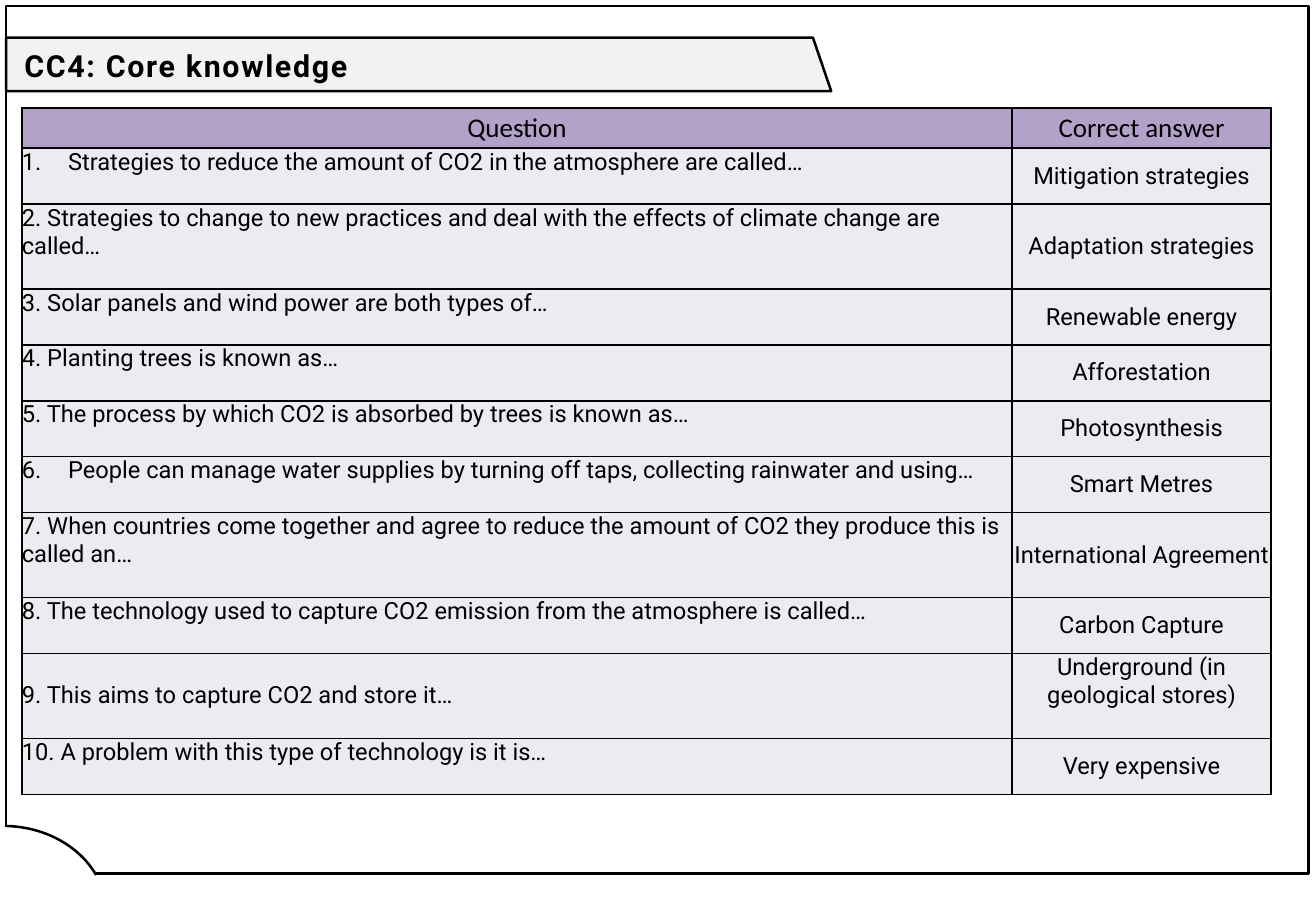
from lxml.etree import SubElement
from pptx import Presentation
from pptx.dml.color import RGBColor
from pptx.enum.shapes import MSO_SHAPE
from pptx.enum.text import MSO_ANCHOR, MSO_AUTO_SIZE, PP_ALIGN
from pptx.oxml.ns import qn
from pptx.util import Inches, Pt

COLORS = {
    "ink": "000000",
    "paper": "FFFFFF",
    "banner": "F2F2F2",
    "header": "B4A1CA",
    "body": "EDEAF1",
}
HEADER = ("Question", "Correct answer")
# question, answer, list number (if automatic), row height
ROWS = [
    ("Strategies to reduce the amount of CO2 in the atmosphere are called…",
     "Mitigation strategies", 1, 0.46),
    ("2. Strategies to change to new practices and deal with the effects of "
     "climate change are called…", "Adaptation strategies", None, 0.7),
    ("3. Solar panels and wind power are both types of…",
     "Renewable energy", None, 0.46),
    ("4. Planting trees is known as…", "Afforestation", None, 0.46),
    ("5. The process by which CO2 is absorbed by trees is known as…",
     "Photosynthesis", None, 0.46),
    ("People can manage water supplies by turning off taps, collecting "
     "rainwater and using…", "Smart Metres", 6, 0.46),
    ("7. When countries come together and agree to reduce the amount of CO2 "
     "they produce this is called an…", "International Agreement", None, 0.7),
    ("8. The technology used to capture CO2 emission from the atmosphere is "
     "called…", "Carbon Capture", None, 0.46),
    ("9. This aims to capture CO2 and store it…",
     "Underground (in geological stores)", None, 0.7),
    ("10. A problem with this type of technology is it is…",
     "Very expensive", None, 0.46),
]
STORE_ROW = 9  # question in the middle, answer at the top


def color(name):
    return RGBColor.from_string(COLORS[name])


def paint(shape, fill=None, line=True):
    shape.shadow.inherit = False
    if fill:
        shape.fill.solid()
        shape.fill.fore_color.rgb = color(fill)
    else:
        shape.fill.background()
    if line:
        shape.line.color.rgb = color("ink")
        shape.line.width = Pt(1.5)
    else:
        shape.line.fill.background()


def add_shape(slide, kind, box, fill=None, line=True):
    shape = slide.shapes.add_shape(kind, *map(Inches, box))
    paint(shape, fill, line)
    return shape


def add_run(para, text, font, size, bold=False):
    run = para.add_run()
    run.text = text
    run.font.name = font
    run.font.size = Pt(size)
    run.font.bold = bold
    run.font.color.rgb = color("ink")
    return run


def add_banner(slide):
    pen = slide.shapes.build_freeform(Inches(0.05), Inches(0.31), scale=1.0)
    points = [(6.69, 0.31), (6.84, 0.75), (0.05, 0.75)]
    pen.add_line_segments([(Inches(x), Inches(y)) for x, y in points])
    paint(pen.convert_to_shape(), "banner")


def add_frame(slide):
    add_shape(slide, MSO_SHAPE.RECTANGLE, (0.05, 0.05, 10.72, 7.14))
    arc = add_shape(slide, MSO_SHAPE.ARC, (-0.82, 6.8, 1.7, 1.45), "paper")
    arc.adjustments[0] = 162.53
    arc.adjustments[1] = 202.27
    add_shape(slide, MSO_SHAPE.RECTANGLE, (0.01, 6.81, 0.05, 0.1),
              "paper", line=False)


def set_title(slide, text):
    """Place the title in front of its banner."""
    title = slide.shapes.title
    title.left, title.top = Inches(0.1), Inches(0.21)
    title.width, title.height = Inches(6.43), Inches(0.63)
    frame = title.text_frame
    frame.auto_size = MSO_AUTO_SIZE.NONE
    frame.vertical_anchor = MSO_ANCHOR.MIDDLE
    para = frame.paragraphs[0]
    para.alignment = PP_ALIGN.LEFT
    para.line_spacing = 1.07
    para.space_after = Pt(8)
    run = add_run(para, text, "Roboto", 18, bold=True)
    run.font._element.set("spc", "100")
    slide.shapes._spTree.append(title._element)


def add_border(cell):
    props = cell._tc.get_or_add_tcPr()
    for side in ("a:lnL", "a:lnR", "a:lnT", "a:lnB"):
        line = SubElement(props, qn(side), w=str(Pt(1)))
        fill = SubElement(line, qn("a:solidFill"))
        SubElement(fill, qn("a:srgbClr"), val=COLORS["ink"])


def add_number(para, start):
    """Turn the paragraph into an automatic list item."""
    props = para._p.get_or_add_pPr()
    props.set("marL", str(Inches(0.38)))
    props.set("indent", str(Inches(-0.38)))
    SubElement(props, qn("a:buFont"), typeface="+mj-lt")
    SubElement(props, qn("a:buAutoNum"), type="arabicPeriod",
               startAt=str(start))


def fill_cell(cell, text, fill, font, size, align=PP_ALIGN.CENTER,
              anchor=MSO_ANCHOR.MIDDLE, start=None):
    cell.margin_left = cell.margin_right = 0
    cell.margin_top = cell.margin_bottom = 0
    cell.vertical_anchor = anchor
    add_border(cell)
    cell.fill.solid()
    cell.fill.fore_color.rgb = color(fill)
    para = cell.text_frame.paragraphs[0]
    para.alignment = align
    if start:
        add_number(para, start)
    add_run(para, text, font, size)


def add_quiz(slide):
    table = slide.shapes.add_table(
        len(ROWS) + 1, 2, Inches(0.18), Inches(0.89),
        Inches(10.28), Inches(5.65)).table
    for col, width in zip(table.columns, (8.15, 2.13)):
        col.width = Inches(width)
    table.rows[0].height = Inches(0.33)
    for col, text in enumerate(HEADER):
        fill_cell(table.cell(0, col), text, "header", "Calibri", 16)
    for row, (question, answer, start, height) in enumerate(ROWS, 1):
        table.rows[row].height = Inches(height)
        anchors = [MSO_ANCHOR.TOP, MSO_ANCHOR.MIDDLE]
        if row == STORE_ROW:
            anchors.reverse()
        fill_cell(table.cell(row, 0), question, "body", "Roboto", 14,
                  PP_ALIGN.LEFT, anchors[0], start)
        fill_cell(table.cell(row, 1), answer, "body", "Roboto", 14,
                  anchor=anchors[1])


def main():
    deck = Presentation()
    deck.slide_width, deck.slide_height = Inches(10.83), Inches(7.5)
    slide = deck.slides.add_slide(deck.slide_layouts[5])
    add_banner(slide)
    add_frame(slide)
    set_title(slide, "CC4: Core knowledge")
    add_quiz(slide)
    deck.save("out.pptx")


if __name__ == "__main__":
    main()
